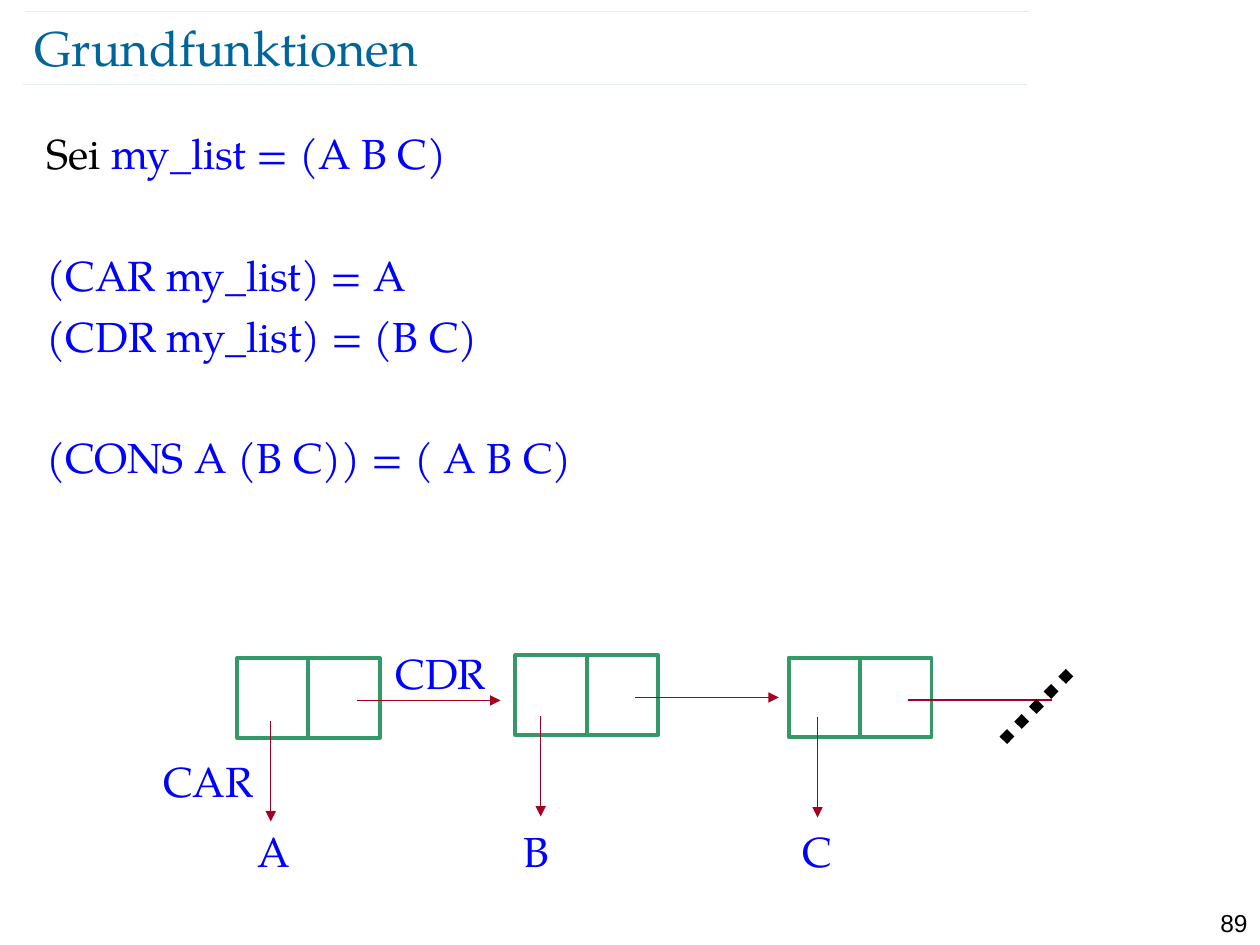
"""Build the slide on the basic list functions CAR, CDR and CONS."""
from lxml import etree
from pptx import Presentation
from pptx.dml.color import RGBColor
from pptx.enum.dml import MSO_LINE
from pptx.enum.shapes import MSO_CONNECTOR, MSO_SHAPE
from pptx.enum.text import MSO_ANCHOR, MSO_AUTO_SIZE, PP_ALIGN
from pptx.oxml.ns import qn
from pptx.util import Cm, Pt

STRAIGHT = MSO_CONNECTOR.STRAIGHT
RECTANGLE = MSO_SHAPE.RECTANGLE
DOTTED = MSO_LINE.ROUND_DOT
MIDDLE = MSO_ANCHOR.MIDDLE
NO_AUTOFIT = MSO_AUTO_SIZE.NONE
LEFT, RIGHT = PP_ALIGN.LEFT, PP_ALIGN.RIGHT

COLOURS = {"title": "006699", "text": "000000", "code": "0000FF",
           "cell": "339966", "arrow": "A50021"}
SERIF, SANS = "TeX Gyre Pagella", "Arial"

TITLE = "Grundfunktionen"
PAGE_NUMBER = "89"
LINE_GAP, GROUP_GAP = 6, 40.8
BODY = [
    (0, [("Sei ", "text"), ("my_list = (A B C)", "code")]),
    (GROUP_GAP, [("(CAR my_list) = A", "code")]),
    (LINE_GAP, [("(CDR my_list) = (B C)", "code")]),
    (GROUP_GAP, [("(CONS A (B C)) = ( A B C)", "code")]),
]
TITLE_RULES = [(0.46, 1.7), (0.51, 0.23)]
RULE_LENGTH = 20.24

CELL_WIDTH, CELL_HEIGHT = 1.44, 1.6
NODES = [
    {"atom": "A", "left": 4.78, "top": 13.27, "car": (5.46, 14.53), "label": 4.95},
    {"atom": "B", "left": 10.39, "top": 13.21, "car": (10.9, 14.43), "label": 10.31},
    {"atom": "C", "left": 15.9, "top": 13.26, "car": (16.48, 14.45), "label": 15.93},
]
CDR_OFFSET, CDR_LENGTH, CAR_LENGTH = (2.41, 0.85), 2.9, 2.03
LIST_END = (21.56, 13.56, 20.19, 14.96)
ATOM_TOP, ATOM_WIDTH = 16.51, 1.12
FUNCTION_WIDTH = 2.77
FUNCTION_LABELS = [("CAR", 3.05, 15.11), ("CDR", 7.72, 12.93)]


def colour(name):
    return RGBColor.from_string(COLOURS[name])


def format_span(span, size, colour_name, font=SERIF):
    span.font.size = Pt(size)
    span.font.name = font
    span.font.color.rgb = colour(colour_name)


def place(shape, left, top, width, height):
    shape.left, shape.top = Cm(left), Cm(top)
    shape.width, shape.height = Cm(width), Cm(height)


def add_line(page, ends, colour_name, width, arrow=False):
    line = page.shapes.add_connector(STRAIGHT, *map(Cm, ends))
    line.line.color.rgb = colour(colour_name)
    line.line.width = Pt(width)
    properties = line._element.spPr
    if arrow:
        outline = properties.find(qn("a:ln"))
        etree.SubElement(outline, qn("a:tailEnd"), type="triangle")
    etree.SubElement(properties, qn("a:effectLst"))
    return line


def add_label(page, text, left, top, width, height=1.27, size=24,
              colour_name="code", font=SERIF, align=LEFT):
    box = page.shapes.add_textbox(*map(Cm, (left, top, width, height)))
    box.text_frame.word_wrap = True
    para = box.text_frame.paragraphs[0]
    para.text = text
    para.alignment = align
    format_span(para.runs[0], size, colour_name, font)


def add_heading(page):
    for left, top in TITLE_RULES:
        rule = add_line(page, (left, top, left + RULE_LENGTH, top), "title", 0.1)
        shade = rule._element.spPr.find(".//" + qn("a:srgbClr"))
        etree.SubElement(shade, qn("a:alpha"), val="35000")
    title = page.shapes.title
    place(title, 0.69, 0.33, 22.07, 1.22)
    frame = title.text_frame
    frame.text = TITLE
    frame.auto_size = NO_AUTOFIT
    frame.vertical_anchor = MIDDLE
    frame.margin_left = frame.margin_right = 0
    frame.margin_top = frame.margin_bottom = 0
    frame.paragraphs[0].alignment = LEFT
    format_span(frame.paragraphs[0].runs[0], 28, "title")


def add_body(page):
    body = page.placeholders[1]
    place(body, 0.69, 2.44, 23.88, 15.67)
    frame = body.text_frame
    frame.auto_size = NO_AUTOFIT
    for index, (gap, spans) in enumerate(BODY):
        para = frame.add_paragraph() if index else frame.paragraphs[0]
        properties = para._p.get_or_add_pPr()
        properties.set("marL", "0")
        properties.set("indent", "0")
        etree.SubElement(properties, qn("a:buNone"))
        para.space_before = Pt(gap)
        for text, colour_name in spans:
            span = para.add_run()
            span.text = text
            format_span(span, 24, colour_name)


def add_node(page, node, linked):
    left, top = node["left"], node["top"]
    for column in range(2):
        cell = page.shapes.add_shape(
            RECTANGLE, Cm(left + column * CELL_WIDTH), Cm(top),
            Cm(CELL_WIDTH), Cm(CELL_HEIGHT))
        cell.shadow.inherit = False
        cell.fill.background()
        cell.line.color.rgb = colour("cell")
        cell.line.width = Pt(2.25)
    x, y = left + CDR_OFFSET[0], top + CDR_OFFSET[1]
    add_line(page, (x, y, x + CDR_LENGTH, y), "arrow", 0.75, linked)
    x, y = node["car"]
    add_line(page, (x, y, x, y + CAR_LENGTH), "arrow", 0.75, True)
    add_label(page, node["atom"], node["label"], ATOM_TOP, ATOM_WIDTH)


def main():
    deck = Presentation()
    deck.slide_width, deck.slide_height = Cm(25.4), Cm(19.05)
    page = deck.slides.add_slide(deck.slide_layouts[1])
    add_heading(page)
    add_body(page)
    for node in NODES:
        add_node(page, node, linked=node is not NODES[-1])
    add_line(page, LIST_END, "text", 6).line.dash_style = DOTTED
    for text, left, top in FUNCTION_LABELS:
        add_label(page, text, left, top, FUNCTION_WIDTH)
    add_label(page, PAGE_NUMBER, 24, 18.19, 1.4, 0.61, 14, "text", SANS, RIGHT)
    deck.save("out.pptx")


if __name__ == "__main__":
    main()
